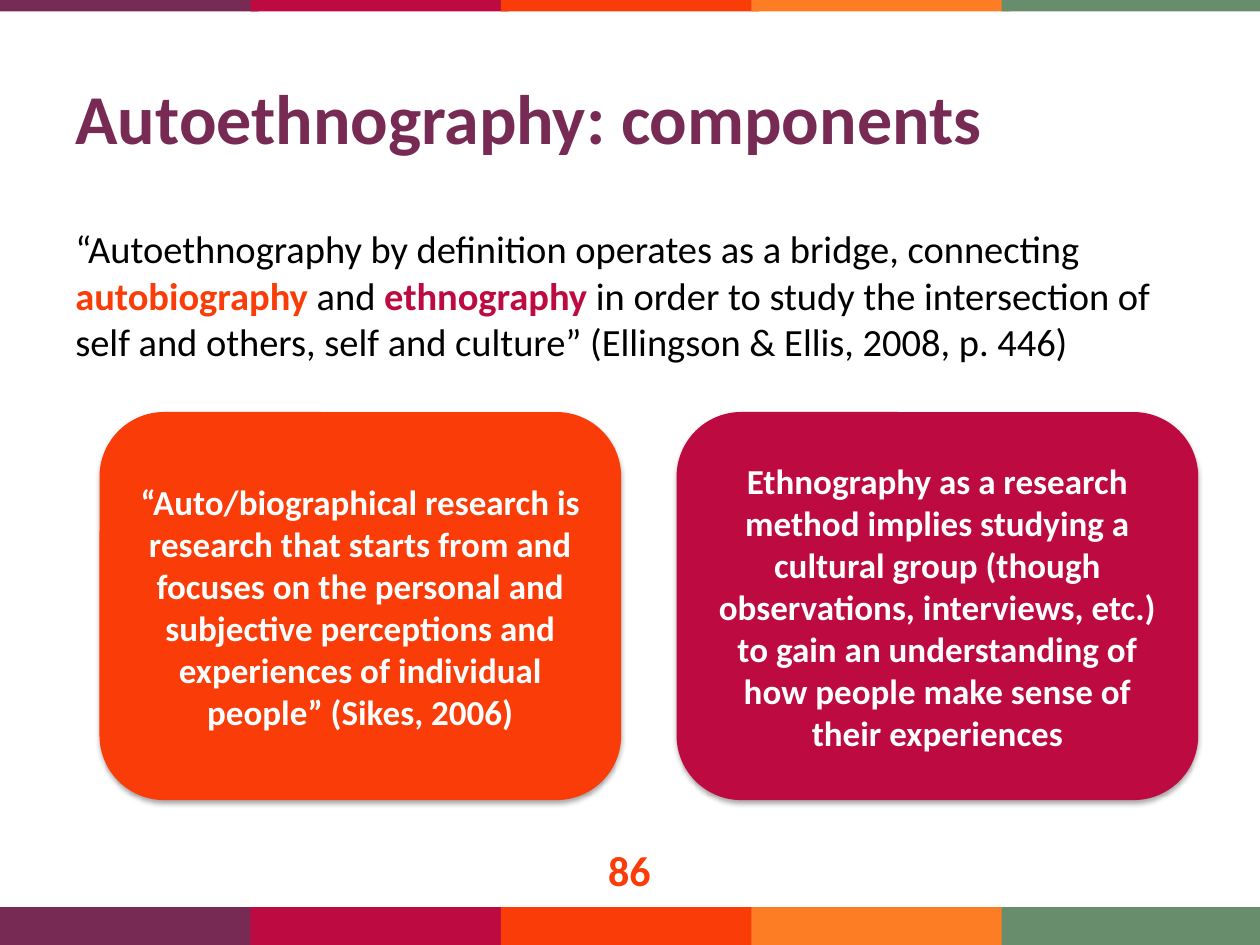
from dataclasses import dataclass

from lxml import etree
from pptx import Presentation
from pptx.dml.color import RGBColor
from pptx.enum import shapes, text
from pptx.oxml import ns
from pptx.util import Inches, Pt


@dataclass(frozen=True)
class Theme:
    """Colours, font and type sizes of the slide."""
    plum: str = "772A53"
    red: str = "BD0A41"
    orange: str = "FA3C08"
    amber: str = "FC7D23"
    green: str = "678D6C"
    black: str = "000000"
    white: str = "FFFFFF"
    face: str = "Calibri"
    title: int = 40
    quote: int = 22
    card: int = 20
    number: int = 24


THEME = Theme()


def rgb(code):
    """Turn a hex code into a colour."""
    return RGBColor.from_string(code)


def style(par, size, color, bold=True, align=text.PP_ALIGN.LEFT):
    """Set the font and alignment of a paragraph."""
    par.alignment = align
    font = par.font
    font.name, font.size, font.bold = THEME.face, Pt(size), bold
    font.color.rgb = rgb(color)


def block(slide, kind, box, color):
    """Add a filled shape without outline or shadow."""
    shape = slide.shapes.add_shape(kind, *map(Inches, box))
    shape.shadow.inherit = False
    shape.fill.solid()
    shape.fill.fore_color.rgb = rgb(color)
    shape.line.fill.background()
    return shape


def stripe(slide, box):
    """Fill a box with five slightly overlapping colour bars."""
    left, top, width, height = box
    colors = (THEME.plum, THEME.red, THEME.orange, THEME.amber, THEME.green)
    bar = 2.05
    step = (width - bar) / (len(colors) - 1)
    for i, color in enumerate(colors):
        block(slide, shapes.MSO_SHAPE.RECTANGLE,
              (left + i * step, top, bar, height), color)


def heading(slide, box, words):
    """Place and format the title placeholder."""
    title = slide.shapes.title
    title.left, title.top, title.width, title.height = map(Inches, box)
    frame = title.text_frame
    frame.text = words
    frame.vertical_anchor = text.MSO_ANCHOR.MIDDLE
    style(frame.paragraphs[0], THEME.title, THEME.plum)


def quote(slide, box, parts):
    """Write a quotation whose key words are bold and coloured."""
    frame = slide.shapes.add_textbox(*map(Inches, box)).text_frame
    frame.word_wrap = True
    par = frame.paragraphs[0]
    style(par, THEME.quote, THEME.black, False)
    for words, color in parts:
        run = par.add_run()
        run.text = words
        if color:
            run.font.bold = True
            run.font.color.rgb = rgb(color)


def shade(shape):
    """Give a shape a soft shadow below it."""
    effects = shape._element.spPr.find(ns.qn("a:effectLst"))
    drop = etree.SubElement(
        effects, ns.qn("a:outerShdw"), blurRad=str(Pt(3.1)),
        dist=str(Pt(1.8)), dir="5400000", rotWithShape="0")
    color = etree.SubElement(drop, ns.qn("a:srgbClr"), val=THEME.black)
    etree.SubElement(color, ns.qn("a:alpha"), val="35000")


def cards(slide, box, items):
    """Set rounded cards side by side in a box."""
    left, top, width, height = box
    gap = 0.44
    size = (width - gap * (len(items) - 1)) / len(items)
    for i, (words, color) in enumerate(items):
        card = block(slide, shapes.MSO_SHAPE.ROUNDED_RECTANGLE,
                     (left + i * (size + gap), top, size, height), color)
        shade(card)
        frame = card.text_frame
        frame.word_wrap = True
        frame.vertical_anchor = text.MSO_ANCHOR.MIDDLE
        frame.text = words
        style(frame.paragraphs[0], THEME.card, THEME.white,
              align=text.PP_ALIGN.CENTER)


def number(slide, box, words):
    """Write the centred slide number."""
    frame = slide.shapes.add_textbox(*map(Inches, box)).text_frame
    frame.word_wrap = True
    frame.vertical_anchor = text.MSO_ANCHOR.MIDDLE
    frame.text = words
    style(frame.paragraphs[0], THEME.number, THEME.orange,
          align=text.PP_ALIGN.CENTER)


def main():
    """Build and save the slide."""
    deck = Presentation()
    deck.slide_width, deck.slide_height = Inches(10), Inches(7.5)
    slide = deck.slides.add_slide(deck.slide_layouts[5])
    stripe(slide, (0, 0, 10, 0.09))
    stripe(slide, (0, 7.2, 10, 0.3))
    heading(slide, (0.5, 0.3, 9, 1.25), "Autoethnography: components")
    quote(slide, (0.5, 1.74, 9, 1.3), (
        ("“Autoethnography by definition operates as a bridge, connecting ",
         None),
        ("autobiography", THEME.orange),
        (" and ", None),
        ("ethnography", THEME.red),
        (" in order to study the intersection of self and others, self and "
         "culture” (Ellingson & Ellis, 2008, p. 446)", None)))
    cards(slide, (0.79, 3.27, 8.72, 3.08), (
        ("“Auto/biographical research is research that starts from and "
         "focuses on the personal and subjective perceptions and experiences "
         "of individual people” (Sikes, 2006)", THEME.orange),
        ("Ethnography as a research method implies studying a cultural group "
         "(though observations, interviews, etc.) to gain an understanding "
         "of how people make sense of their experiences", THEME.red)))
    number(slide, (3.83, 6.7, 2.33, 0.4), "86")
    deck.save("out.pptx")


if __name__ == "__main__":
    main()
